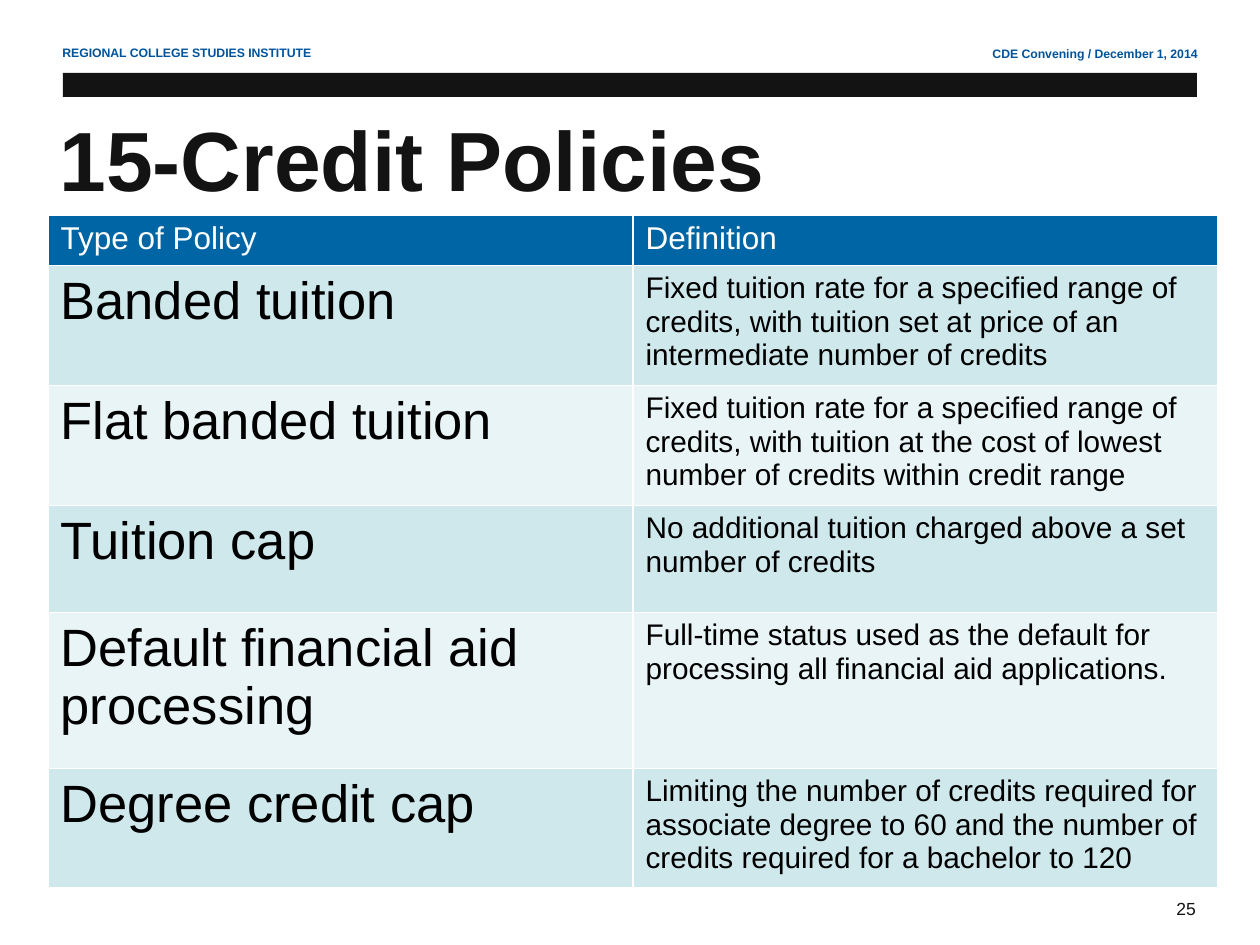
from lxml import etree
from pptx import Presentation
from pptx.dml.color import RGBColor
from pptx.enum.shapes import MSO_SHAPE
from pptx.enum.text import MSO_ANCHOR, MSO_AUTO_SIZE, PP_ALIGN
from pptx.oxml.ns import qn
from pptx.util import Pt

RECTANGLE = MSO_SHAPE.RECTANGLE
MIDDLE = MSO_ANCHOR.MIDDLE
NO_AUTOFIT = MSO_AUTO_SIZE.NONE
LEFT, RIGHT = PP_ALIGN.LEFT, PP_ALIGN.RIGHT
TITLE_ONLY = 5
EMU_PER_PX = 914400 / 126

INK, BLACK, WHITE = "141313", "000000", "FFFFFF"
NAVY, HEADER_BLUE = "00539B", "0065A4"
BANDS = ("CFE8EC", "E9F4F6")

POLICIES = [
    ("Type of Policy", "Definition"),
    ("Banded tuition",
     "Fixed tuition rate for a specified range of credits, with tuition set at price "
     "of an intermediate number of credits"),
    ("Flat banded tuition",
     "Fixed tuition rate for a specified range of credits, with tuition at the cost "
     "of lowest number of credits within credit range"),
    ("Tuition cap",
     "No additional tuition charged above a set number of credits"),
    ("Default financial aid processing",
     "Full-time status used as the default for processing all financial aid applications."),
    ("Degree credit cap",
     "Limiting the number of credits required for associate degree to 60 and the "
     "number of credits required for a bachelor to 120"),
]
ROW_HEIGHTS = [50, 120, 120, 107, 156, 119]


def px(length):
    return round(length * EMU_PER_PX)


def color(value):
    return RGBColor.from_string(value)


class PolicySlide:
    font_name = "Arial"

    def __init__(self, deck):
        self.page = deck.slides.add_slide(deck.slide_layouts[TITLE_ONLY])

    def set_text(self, frame, text, size, ink, bold=False, align=LEFT):
        frame.word_wrap = True
        para = frame.paragraphs[0]
        para.text = text
        para.alignment = align
        para.font.name = self.font_name
        para.font.size = Pt(size)
        para.font.bold = bold
        para.font.color.rgb = color(ink)

    def title(self, text, left, top, width, height):
        box = self.page.shapes.title
        box.left, box.top, box.width, box.height = map(px, (left, top, width, height))
        box.text_frame.auto_size = NO_AUTOFIT
        box.text_frame.vertical_anchor = MIDDLE
        self.set_text(box.text_frame, text, 48, INK, bold=True)

    def label(self, text, left, top, width, height, size, ink, bold=False, align=LEFT):
        box = self.page.shapes.add_textbox(*map(px, (left, top, width, height)))
        self.set_text(box.text_frame, text, size, ink, bold, align)

    def bar(self, left, top, width, height):
        shape = self.page.shapes.add_shape(RECTANGLE, *map(px, (left, top, width, height)))
        shape.shadow.inherit = False
        shape.fill.solid()
        shape.fill.fore_color.rgb = color(INK)
        shape.line.fill.background()

    def borders(self, cell):
        properties = cell._tc.get_or_add_tcPr()
        for position, side in enumerate(("lnL", "lnR", "lnT", "lnB")):
            line = etree.Element(qn(f"a:{side}"), w=str(Pt(1)))
            fill = etree.SubElement(line, qn("a:solidFill"))
            etree.SubElement(fill, qn("a:srgbClr"), val=WHITE)
            properties.insert(position, line)

    def table(self, rows, heights, left, top, width):
        columns = len(rows[0])
        frame = self.page.shapes.add_table(
            len(rows), columns, *map(px, (left, top, width, sum(heights))))
        table = frame.table
        for row, height in zip(table.rows, heights):
            row.height = px(height)
        for column in table.columns:
            column.width = px(width / columns)
        for row_index, texts in enumerate(rows):
            for column_index, text in enumerate(texts):
                cell = table.cell(row_index, column_index)
                cell.fill.solid()
                if row_index == 0:
                    background, size, ink = HEADER_BLUE, 18, WHITE
                else:
                    background = BANDS[(row_index - 1) % 2]
                    size, ink = (30, 17)[column_index], BLACK
                cell.fill.fore_color.rgb = color(background)
                self.set_text(cell.text_frame, text, size, ink)
                self.borders(cell)


def main():
    deck = Presentation()
    deck.slide_width, deck.slide_height = px(1260), px(945)
    slide = PolicySlide(deck)
    slide.label("CDE Convening / December 1, 2014", 809, 40, 401, 28, 7, NAVY, True, RIGHT)
    slide.label("25", 1164, 892, 58, 34, 10, INK)
    slide.bar(63, 73, 1134, 24)
    slide.label("REGIONAL COLLEGE STUDIES INSTITUTE", 50, 39, 449, 28, 7, NAVY, True)
    slide.table(POLICIES, ROW_HEIGHTS, 48, 215, 1170)
    slide.title("15-Credit Policies", 47, 79, 1134, 158)
    deck.save("out.pptx")


if __name__ == "__main__":
    main()
